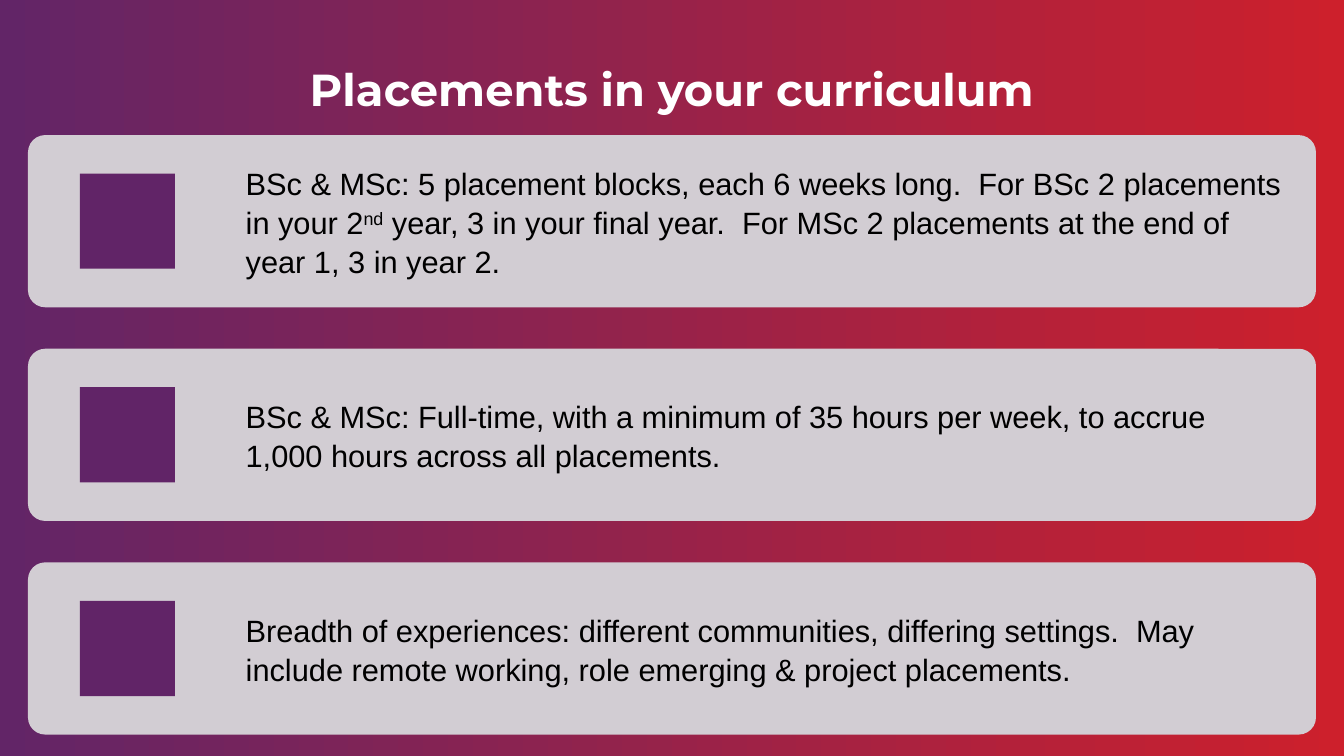
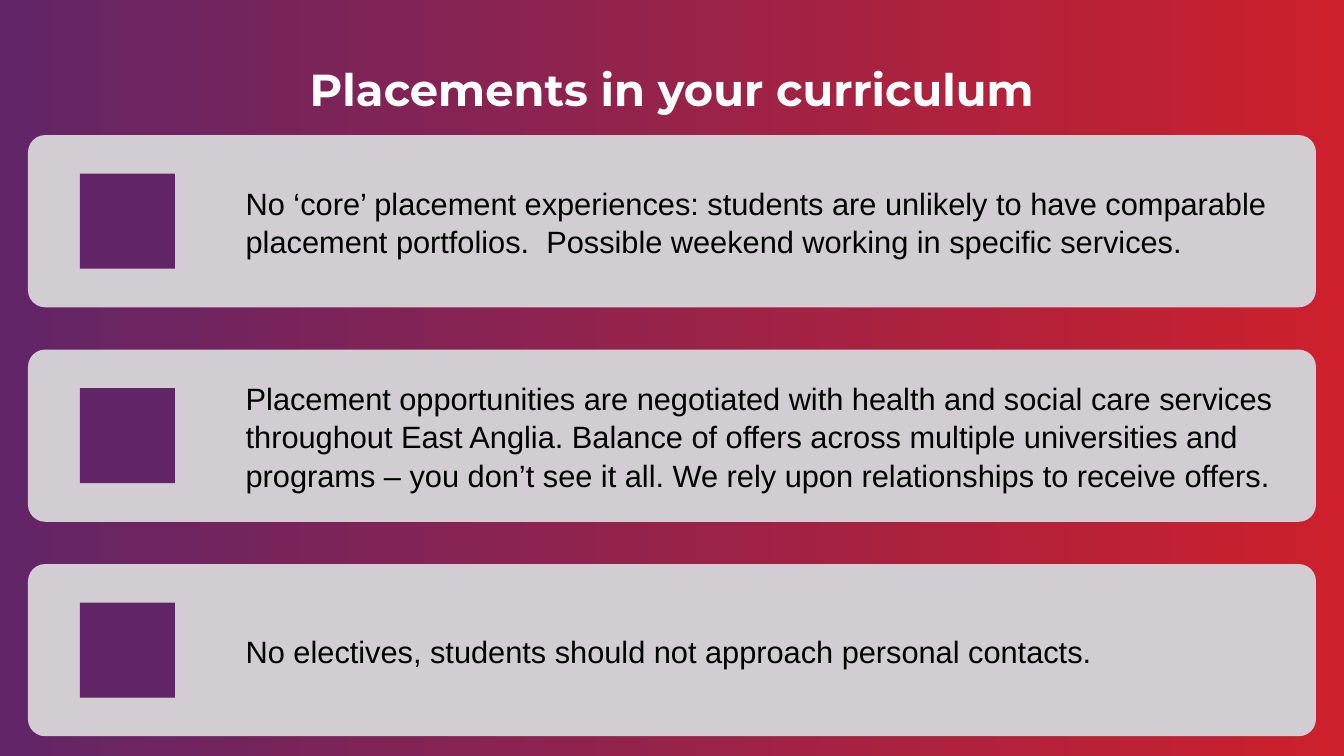
from dataclasses import dataclass

from pptx import Presentation
from pptx.dml.color import RGBColor
from pptx.enum.shapes import MSO_SHAPE
from pptx.enum.text import MSO_ANCHOR, MSO_AUTO_SIZE, PP_ALIGN
from pptx.util import Pt


@dataclass(frozen=True)
class Theme:
    gradient: tuple = ("622567", "CD202C")
    card: str = "D2CDD3"
    marker: str = "612467"
    title_color: str = "FFFFFF"
    text_color: str = "000000"
    title_font: str = "Montserrat"
    text_font: str = "Arial"
    title_size: int = 32
    text_size: int = 22


WIDTH, HEIGHT = 960, 540
CARD_LEFT, CARD_TOP, CARD_WIDTH, CARD_HEIGHT = 20, 96.5, 920, 123
CARD_RADIUS = 0.1
MARKER_LEFT, MARKER_SIZE = 57, 68
TEXT_LEFT, TEXT_WIDTH, TEXT_INSET = 162.5, 770, 13

SLIDES = [
    ("Placements in your curriculum", 152.6, [
        "BSc & MSc: 5 placement blocks, each 6 weeks long.  For BSc 2 placements "
        "in your 2^nd^ year, 3 in your final year.  For MSc 2 placements at the "
        "end of year 1, 3 in year 2.",
        "BSc & MSc: Full-time, with a minimum of 35 hours per week, to accrue "
        "1,000 hours across all placements.",
        "Breadth of experiences: different communities, differing settings.  May "
        "include remote working, role emerging & project placements.",
    ]),
    ("Placements in your curriculum", 153.2, [
        "No ‘core’ placement experiences: students are unlikely to have comparable "
        "placement portfolios.  Possible weekend working in specific services.",
        "Placement opportunities are negotiated with health and social care "
        "services throughout East Anglia. Balance of offers across multiple "
        "universities and programs – you don’t see it all. We rely upon "
        "relationships to receive offers.",
        "No electives, students should not approach personal contacts.",
    ]),
]


class Deck:
    def __init__(self, theme):
        self.theme = theme
        self.prs = Presentation()
        self.prs.slide_width, self.prs.slide_height = Pt(WIDTH), Pt(HEIGHT)
        self.s = None
        fill = self.prs.slide_master.background.fill
        fill.gradient()
        fill.gradient_angle = 0
        for stop, color in zip(fill.gradient_stops, theme.gradient):
            stop.color.rgb = RGBColor.from_string(color)

    def add_slide(self, title):
        self.s = self.prs.slides.add_slide(self.prs.slide_layouts.get_by_name("Title Only"))
        sp = self.s.shapes.title
        sp.left, sp.top, sp.width, sp.height = Pt(4), Pt(0), Pt(952), Pt(88.5)
        tf = sp.text_frame
        tf.text = title
        self.frame(tf, MSO_ANCHOR.BOTTOM, (0, 0, 0, 6))
        p = tf.paragraphs[0]
        p.alignment = PP_ALIGN.CENTER
        p.line_spacing = 1.3
        self.style(p.runs[0], self.theme.title_font, self.theme.title_size,
                   self.theme.title_color, True)

    def frame(self, tf, anchor, insets):
        tf.word_wrap = True
        tf.auto_size = MSO_AUTO_SIZE.NONE
        tf.vertical_anchor = anchor
        tf.margin_left, tf.margin_top, tf.margin_right, tf.margin_bottom = map(Pt, insets)

    def style(self, r, font, size, color, bold=False):
        r.font.name = font
        r.font.size = Pt(size)
        r.font.bold = bold
        r.font.color.rgb = RGBColor.from_string(color)

    def shape(self, kind, left, top, width, height, color):
        sp = self.s.shapes.add_shape(kind, Pt(left), Pt(top), Pt(width), Pt(height))
        sp.shadow.inherit = False
        sp.fill.solid()
        sp.fill.fore_color.rgb = RGBColor.from_string(color)
        sp.line.fill.background()
        return sp

    def text(self, left, top, width, height, text):
        sp = self.s.shapes.add_textbox(Pt(left), Pt(top), Pt(width), Pt(height))
        tf = sp.text_frame
        self.frame(tf, MSO_ANCHOR.MIDDLE, [TEXT_INSET] * 4)
        p = tf.paragraphs[0]
        p.line_spacing = 1.05
        for i, part in enumerate(text.split("^")):
            r = p.add_run()
            r.text = part
            self.style(r, self.theme.text_font, self.theme.text_size, self.theme.text_color)
            if i % 2:
                r.font._element.set("baseline", "30000")

    def card(self, top, text):
        sp = self.shape(MSO_SHAPE.ROUNDED_RECTANGLE, CARD_LEFT, top,
                        CARD_WIDTH, CARD_HEIGHT, self.theme.card)
        sp.adjustments[0] = CARD_RADIUS
        self.shape(MSO_SHAPE.RECTANGLE, MARKER_LEFT, top + (CARD_HEIGHT - MARKER_SIZE) / 2,
                   MARKER_SIZE, MARKER_SIZE, self.theme.marker)
        self.text(TEXT_LEFT, top, TEXT_WIDTH, CARD_HEIGHT, text)


def main():
    deck = Deck(Theme())
    for title, pitch, cards in SLIDES:
        deck.add_slide(title)
        for i, text in enumerate(cards):
            deck.card(CARD_TOP + i * pitch, text)
    deck.prs.save("out.pptx")


if __name__ == "__main__":
    main()
